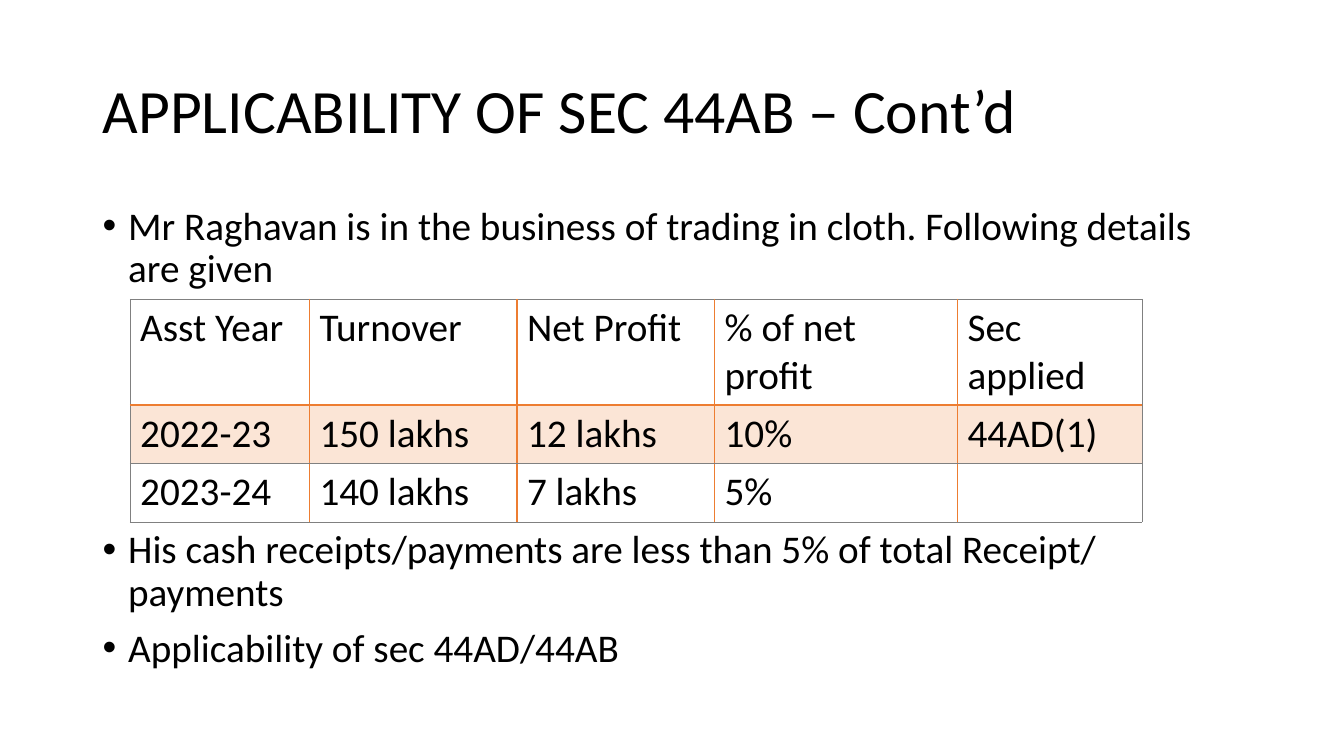
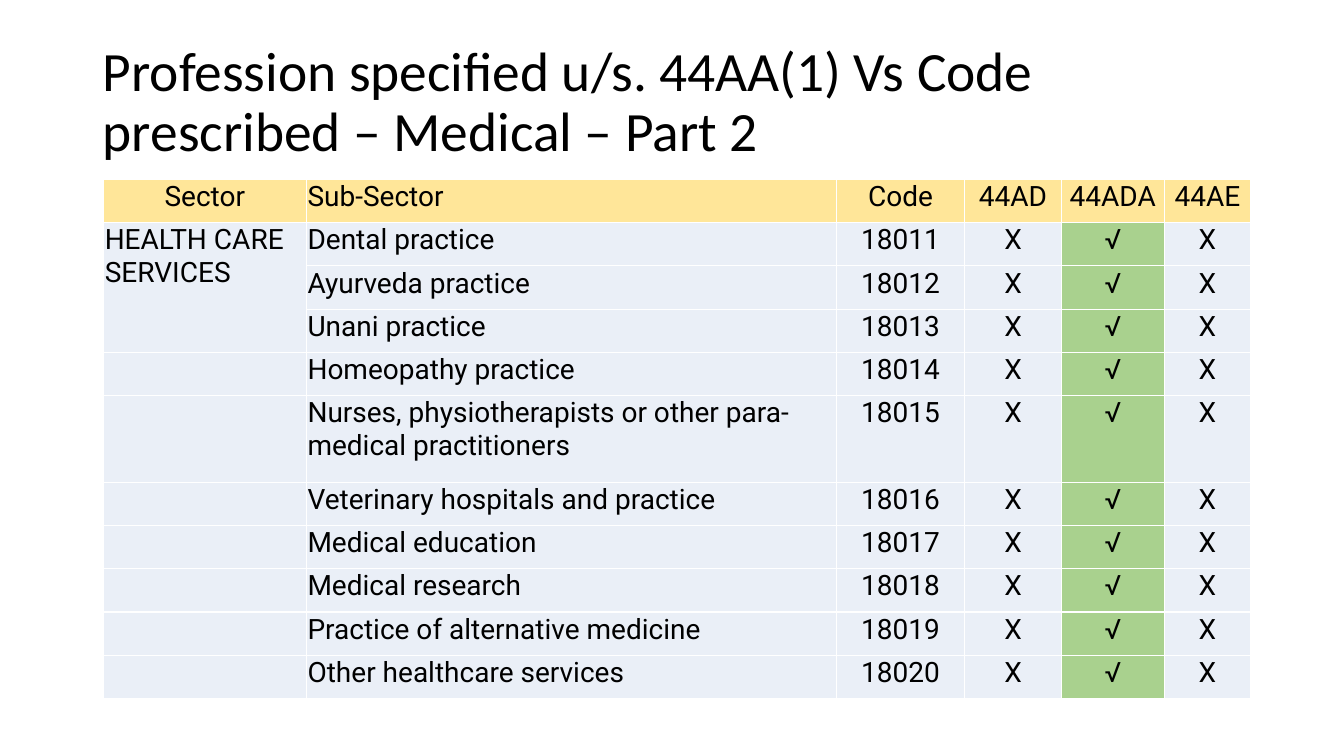
from lxml.etree import SubElement
from pptx import Presentation
from pptx.dml.color import RGBColor
from pptx.enum.text import MSO_ANCHOR as Anchor, PP_ALIGN as Align
from pptx.oxml.ns import qn
from pptx.util import Cm, Pt

BLACK = RGBColor(0x00, 0x00, 0x00)
WHITE = RGBColor(0xFF, 0xFF, 0xFF)
GREY = RGBColor(0x80, 0x80, 0x80)
ORANGE = RGBColor(0xED, 0x7D, 0x31)
PEACH = RGBColor(0xFB, 0xE5, 0xD6)
YELLOW = RGBColor(0xFF, 0xE6, 0x99)
PALE_BLUE = RGBColor(0xEA, 0xEF, 0xF7)
GREEN = RGBColor(0xA9, 0xD1, 0x8E)

LEFT, TITLE_TOP, TEXT_WIDTH = 2.34, 1.02, 29.21
BODY_FONT = {"name": "Calibri", "size": Pt(28)}
CODE_FONT = {"name": "Roboto", "size": Pt(20)}
TIGHT_MARGINS = {
    "margin_left": Cm(0.03),
    "margin_right": Cm(0.03),
    "margin_top": Cm(0.03),
    "margin_bottom": 0,
}

CASE_TITLE = "APPLICABILITY OF SEC 44AB – Cont’d"
CASE_FACTS = ["Mr Raghavan is in the business of trading in cloth. Following details are given"]
CASE_QUESTIONS = [
    "His cash receipts/payments are less than 5% of total Receipt/ payments",
    "Applicability of sec 44AD/44AB",
]
CASE_ROWS = [
    ("Asst Year", "Turnover", "Net Profit", "% of net profit", "Sec applied"),
    ("2022-23", "150 lakhs", "12 lakhs", "10%", "44AD(1)"),
    ("2023-24", "140 lakhs", "7 lakhs", "5%", ""),
]
CASE_WIDTHS = [4.52, 5.23, 4.98, 6.12, 4.65]
CASE_HEIGHTS = [2.67, 1.47, 1.47]
OUTLINE, DIVIDER, HEADER_RULE = (GREY, 0.5), (ORANGE, 1), (ORANGE, 1.5)

CODES_TITLE = "Profession specified u/s. 44AA(1) Vs Code prescribed – Medical – Part 2"
CODES_HEADER = ("Sector", "Sub-Sector", "Code", "44AD", "44ADA", "44AE")
SECTOR = "HEALTH CARE SERVICES"
SECTOR_SPAN = 3
FIRST_CODE = 18011
SUB_SECTORS = [
    "Dental practice",
    "Ayurveda practice",
    "Unani practice",
    "Homeopathy practice",
    "Nurses, physiotherapists or other para-medical practitioners",
    "Veterinary hospitals and practice",
    "Medical education",
    "Medical research",
    "Practice of alternative medicine",
    "Other healthcare services",
]
TALL_ROW = 5
CODES_WIDTHS = [5.11, 13.36, 3.23, 2.44, 2.59, 2.18]
CODES_ROW_HEIGHT = 1.09


def apply_format(target, values):
    for name, value in values.items():
        setattr(target, name, value)


def write(para, text, font):
    span = para.add_run()
    span.text = text
    apply_format(span.font, font)
    span.font.color.rgb = BLACK


def add_text(page, top, height, lines, font, anchor=Anchor.TOP, bullets=False):
    box = page.shapes.add_textbox(Cm(LEFT), Cm(top), Cm(TEXT_WIDTH), Cm(height))
    frame = box.text_frame
    apply_format(frame, {"word_wrap": True, "vertical_anchor": anchor})
    for index, line in enumerate(lines):
        para = frame.add_paragraph() if index else frame.paragraphs[0]
        space = Pt(10) if index else Pt(0)
        apply_format(para, {"line_spacing": 0.9, "space_before": space})
        write(para, line, font)
        if bullets:
            add_bullet(para)


def add_bullet(para):
    props = para._p.get_or_add_pPr()
    props.set("marL", str(Cm(0.64)))
    props.set("indent", str(-Cm(0.64)))
    SubElement(props, qn("a:buFont"), typeface="Arial")
    SubElement(props, qn("a:buChar"), char="•")


def add_title(page, text, size, height):
    font = {"name": "Calibri", "size": Pt(size)}
    add_text(page, TITLE_TOP, height, [text], font, Anchor.MIDDLE)


def set_borders(cell, edges):
    props = cell._tc.get_or_add_tcPr()
    for side, (color, width) in zip("LRTB", edges):
        line = SubElement(props, qn(f"a:ln{side}"), w=str(Pt(width)))
        fill = SubElement(line, qn("a:solidFill"))
        SubElement(fill, qn("a:srgbClr"), val=str(color))


def add_grid(page, place, rows, widths, heights, font, verticals, horizontals,
             fill_of, align_of, margins):
    left, top = place
    frame = page.shapes.add_table(len(rows), len(widths), Cm(left), Cm(top),
                                  Cm(sum(widths)), Cm(sum(heights)))
    table = frame.table
    apply_format(table, {"first_row": False, "horz_banding": False})
    for column, width in zip(table.columns, widths):
        column.width = Cm(width)
    for row, height in zip(table.rows, heights):
        row.height = Cm(height)
    for r, texts in enumerate(rows):
        for c, text in enumerate(texts):
            cell = table.cell(r, c)
            apply_format(cell, margins)
            set_borders(cell, verticals[c:c + 2] + horizontals[r:r + 2])
            color = fill_of(r, c)
            if color is None:
                cell.fill.background()
            else:
                cell.fill.solid()
                cell.fill.fore_color.rgb = color
            para = cell.text_frame.paragraphs[0]
            para.alignment = align_of(r, c)
            if text:
                write(para, text, font)
    return table


def case_fill(row, column):
    return PEACH if row == 1 else None


def case_align(row, column):
    return Align.LEFT


def codes_fill(row, column):
    if row == 0:
        return YELLOW
    return GREEN if CODES_HEADER[column] == "44ADA" else PALE_BLUE


def codes_align(row, column):
    centred = column > 1 or (row, column) == (0, 0)
    return Align.CENTER if centred else Align.LEFT


def build_case(page):
    add_title(page, CASE_TITLE, 44, 3.68)
    add_text(page, 5.08, 2.4, CASE_FACTS, BODY_FONT, bullets=True)
    verticals = [OUTLINE] + [DIVIDER] * (len(CASE_WIDTHS) - 1) + [OUTLINE]
    horizontals = [OUTLINE, HEADER_RULE, OUTLINE, OUTLINE]
    add_grid(page, (3.28, 7.54), CASE_ROWS, CASE_WIDTHS, CASE_HEIGHTS, BODY_FONT,
             verticals, horizontals, case_fill, case_align, {})
    add_text(page, 13.23, 3.94, CASE_QUESTIONS, BODY_FONT, bullets=True)


def build_codes(page):
    add_title(page, CODES_TITLE, 39.6, 3.18)
    rows = [CODES_HEADER]
    for index, name in enumerate(SUB_SECTORS):
        sector = "" if index else SECTOR
        rows.append((sector, name, str(FIRST_CODE + index), "X", "√", "X"))
    heights = [CODES_ROW_HEIGHT * (2 if r == TALL_ROW else 1) for r in range(len(rows))]
    rule = (WHITE, 1)
    table = add_grid(page, (2.61, 4.52), rows, CODES_WIDTHS, heights, CODE_FONT,
                     [rule] * (len(CODES_WIDTHS) + 1), [rule] * (len(rows) + 1),
                     codes_fill, codes_align, TIGHT_MARGINS)
    table.cell(1, 0).merge(table.cell(SECTOR_SPAN, 0))


def main():
    deck = Presentation()
    apply_format(deck, {"slide_width": Cm(33.87), "slide_height": Cm(19.05)})
    for build in (build_case, build_codes):
        build(deck.slides.add_slide(deck.slide_layouts[6]))
    deck.save("out.pptx")


if __name__ == "__main__":
    main()
